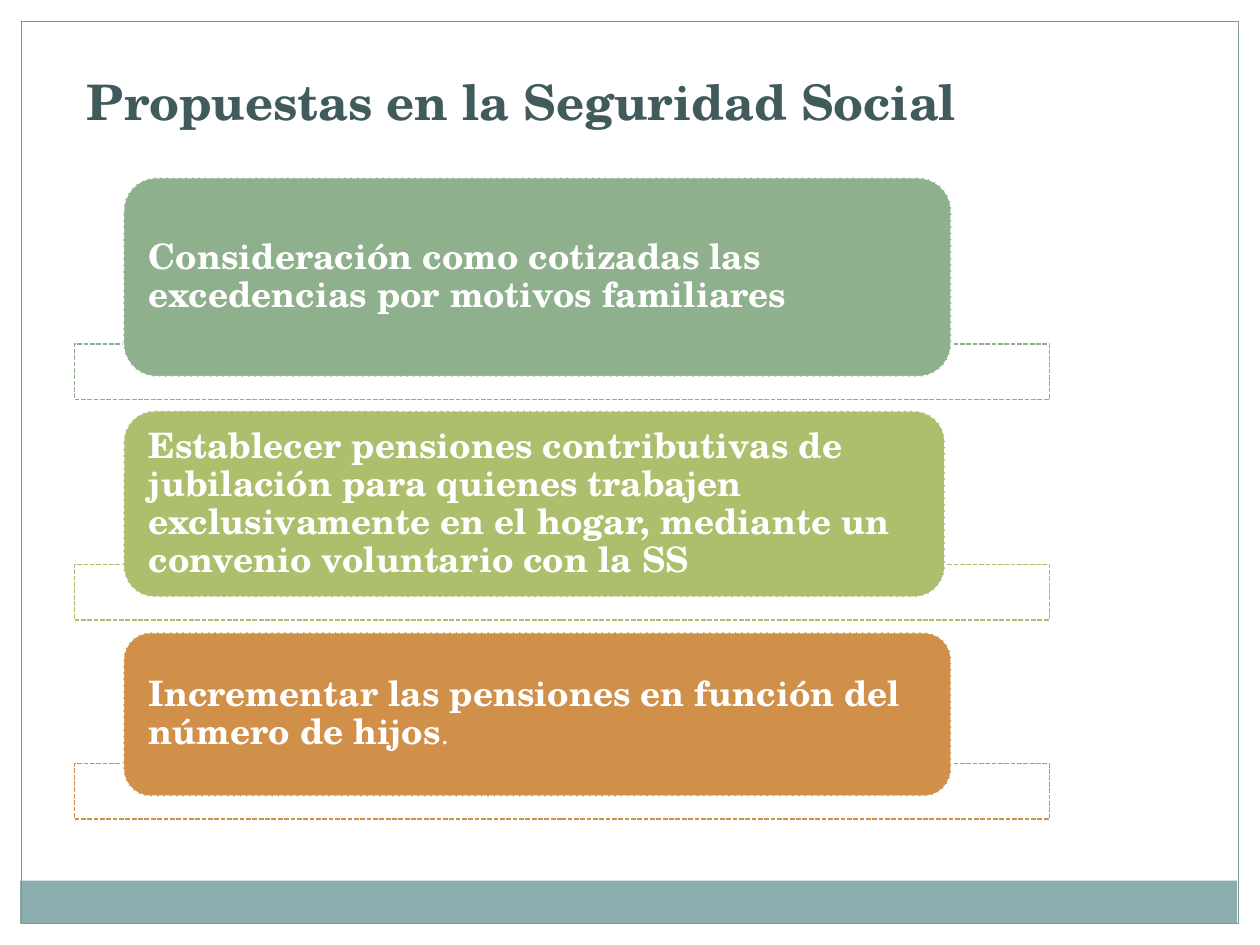
from dataclasses import dataclass

from lxml.etree import SubElement
from pptx import Presentation
from pptx.dml.color import RGBColor
from pptx.enum.dml import MSO_LINE
from pptx.enum.shapes import MSO_SHAPE
from pptx.enum.text import MSO_ANCHOR, MSO_AUTO_SIZE, PP_ALIGN
from pptx.oxml.ns import qn
from pptx.shapes.autoshape import Shape
from pptx.slide import Slide
from pptx.text.text import _Paragraph
from pptx.util import Inches, Pt

COLORS = {
    "white": "FFFFFF",
    "title": "415B5C",
    "frame": "7C999A",
    "footer": "8CADAE",
    "sage": "8FB08C",
    "lime": "ADBF6C",
    "orange": "D19049",
}
FONT = "TeX Gyre Schola"
CARD_LEFT = 0.98
TRAY_LEFT, TRAY_WIDTH, TRAY_HEIGHT = 0.59, 7.74, 0.44
TRAY_DROP = 0.18
TEXT_MARGIN = 0.2
CORNER_INSET = 0.29 / 6


@dataclass(frozen=True)
class Proposal:
    text: str
    color: str
    top: float
    height: float
    width: float = 6.57
    ending: str = ""


PROPOSALS = [
    Proposal("Consideración como cotizadas las excedencias por motivos familiares",
             "sage", 1.41, 1.58),
    Proposal("Establecer pensiones contributivas de jubilación para quienes trabajen "
             "exclusivamente en el hogar, mediante un convenio voluntario con la SS",
             "lime", 3.26, 1.48, width=6.52),
    Proposal("Incrementar las pensiones en función del número de hijos",
             "orange", 5.02, 1.3, ending="."),
]


def rgb(name: str) -> RGBColor:
    return RGBColor.from_string(COLORS[name])


def add_text(paragraph: _Paragraph, text: str, *, size: float,
             color: str = "white", bold: bool = True) -> None:
    run = paragraph.add_run()
    run.text = text
    run.font.name = FONT
    run.font.size = Pt(size)
    run.font.bold = bold
    run.font.color.rgb = rgb(color)


def add_box(slide: Slide, kind: MSO_SHAPE, left: float, top: float,
            width: float, height: float, *, fill: str | None = None,
            opacity: int = 100, line: str | None = None,
            line_width: float = 0.9, dashed: bool = False) -> Shape:
    shape = slide.shapes.add_shape(
        kind, Inches(left), Inches(top), Inches(width), Inches(height))
    shape.shadow.inherit = False
    if fill:
        shape.fill.solid()
        shape.fill.fore_color.rgb = rgb(fill)
        if opacity < 100:
            color = shape.fill._xPr.find(f".//{qn('a:srgbClr')}")
            SubElement(color, qn("a:alpha"), val=str(opacity * 1000))
    else:
        shape.fill.background()
    if line:
        shape.line.color.rgb = rgb(line)
        shape.line.width = Pt(line_width)
        if dashed:
            shape.line.dash_style = MSO_LINE.SQUARE_DOT
    else:
        shape.line.fill.background()
    return shape


def add_title(slide: Slide, text: str) -> None:
    title = slide.shapes.title
    title.left, title.top = Inches(0.59), Inches(0.52)
    title.width, title.height = Inches(7.32), Inches(0.57)
    frame = title.text_frame
    frame.word_wrap = False
    frame.auto_size = MSO_AUTO_SIZE.SHAPE_TO_FIT_TEXT
    frame.vertical_anchor = MSO_ANCHOR.TOP
    paragraph = frame.paragraphs[0]
    paragraph.alignment = PP_ALIGN.LEFT
    add_text(paragraph, text, size=28, color="title")


def add_proposal(slide: Slide, proposal: Proposal) -> None:
    tray_top = proposal.top + proposal.height + TRAY_DROP - TRAY_HEIGHT
    add_box(slide, MSO_SHAPE.RECTANGLE, TRAY_LEFT, tray_top, TRAY_WIDTH, TRAY_HEIGHT,
            fill="white", opacity=90, line=proposal.color, dashed=True)
    card = add_box(slide, MSO_SHAPE.ROUNDED_RECTANGLE, CARD_LEFT, proposal.top,
                   proposal.width, proposal.height,
                   fill=proposal.color, line="white", dashed=True)
    frame = card.text_frame
    frame.word_wrap = True
    frame.vertical_anchor = MSO_ANCHOR.MIDDLE
    margin = Inches(TEXT_MARGIN - CORNER_INSET * proposal.height)
    frame.margin_left = frame.margin_right = margin
    frame.margin_top = frame.margin_bottom = 0
    paragraph = frame.paragraphs[0]
    paragraph.alignment = PP_ALIGN.LEFT
    paragraph.line_spacing = 0.9
    add_text(paragraph, proposal.text, size=20)
    if proposal.ending:
        add_text(paragraph, proposal.ending, size=16, bold=False)


def main() -> None:
    presentation = Presentation()
    presentation.slide_width = Inches(10)
    presentation.slide_height = Inches(7.5)
    slide = presentation.slides.add_slide(presentation.slide_layouts[5])
    add_box(slide, MSO_SHAPE.RECTANGLE, 0.16, 6.99, 9.66, 0.34, fill="footer")
    add_box(slide, MSO_SHAPE.RECTANGLE, 0.17, 0.17, 9.66, 7.16,
            line="frame", line_width=0.75)
    add_title(slide, "Propuestas en la Seguridad Social")
    for proposal in PROPOSALS:
        add_proposal(slide, proposal)
    presentation.save("out.pptx")


if __name__ == "__main__":
    main()
